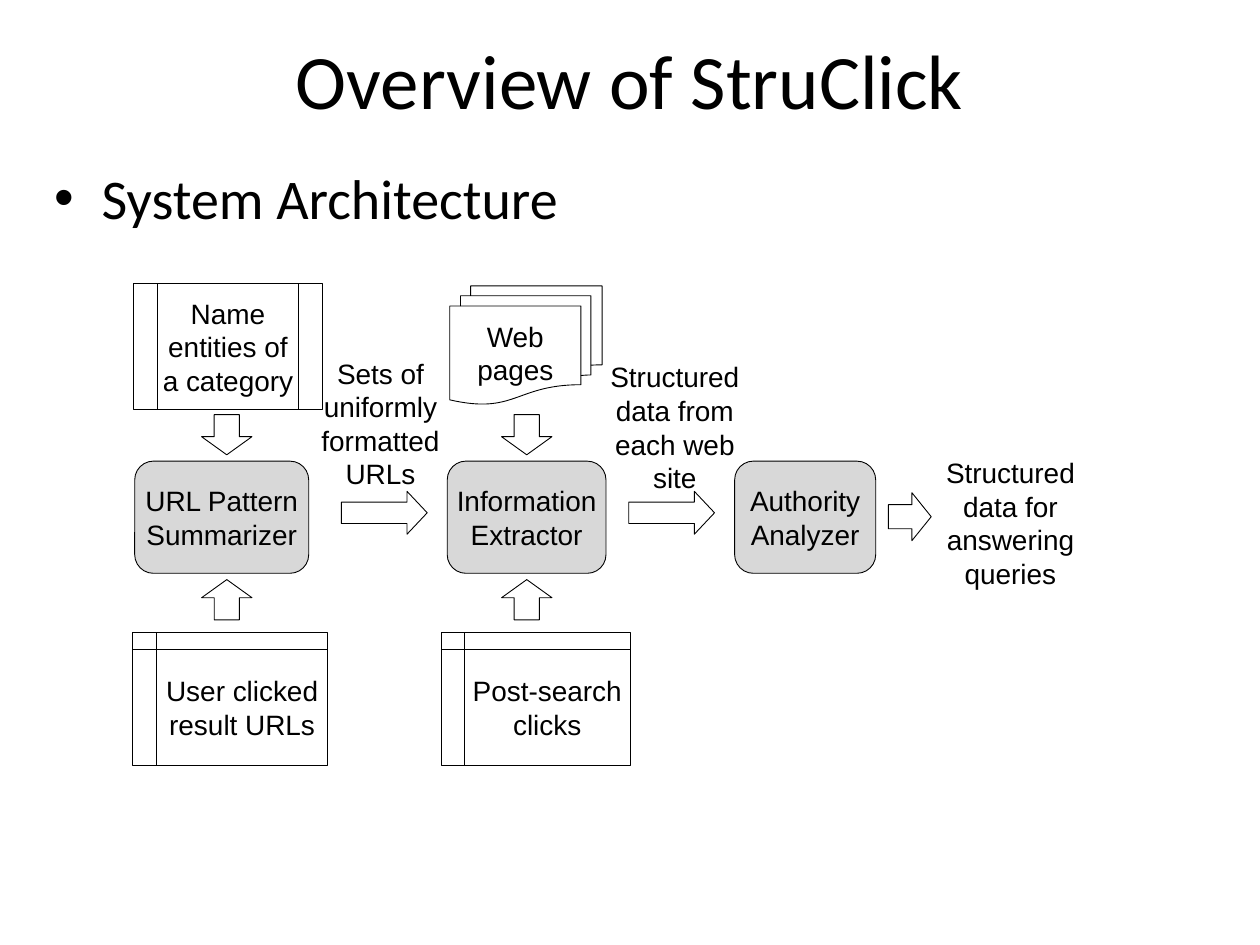
from lxml.etree import SubElement
from pptx import Presentation
from pptx.dml.color import RGBColor
from pptx.enum.shapes import MSO_SHAPE
from pptx.enum.text import MSO_ANCHOR, PP_ALIGN
from pptx.oxml.ns import qn
from pptx.util import Pt

BLACK = RGBColor(0, 0, 0)
WHITE = RGBColor(255, 255, 255)
GREY = RGBColor(0xD8, 0xD8, 0xD8)

INPUTS = [
    (MSO_SHAPE.FLOWCHART_PREDEFINED_PROCESS, "Name entities of a category", (4.3, 0, 108, 72)),
    (MSO_SHAPE.FLOWCHART_INTERNAL_STORAGE, "User clicked result URLs", (3.6, 199.4, 111.6, 76.3)),
    (MSO_SHAPE.FLOWCHART_INTERNAL_STORAGE, "Post-search clicks", (180, 199.4, 108, 76.3)),
    (MSO_SHAPE.FLOWCHART_MULTIDOCUMENT, "Web pages", (185, 1.4, 87.1, 67.7)),
]
STEPS = [
    ("URL Pattern Summarizer", 5, 99.4),
    ("Information Extractor", 183.6, 90.7),
    ("Authority Analyzer", 347.8, 80.6),
]
LABELS = [
    ("Structured data for answering queries", (465.1, 98.6, 80.6, 76.3)),
    ("Sets of uniformly formatted URLs", (110.9, 41.8, 69.1, 76.3)),
    ("Structured data from each web site", (275.8, 43.9, 75.6, 76.3)),
]


def write(frame, text, size, font, align):
    """Put one run of text in a frame and return its paragraph."""
    frame.word_wrap = True
    para = frame.paragraphs[0]
    para.alignment = align
    run = para.add_run()
    run.text = text
    run.font.size = Pt(size)
    run.font.name = font
    run.font.color.rgb = BLACK
    return para


def note(shape, text):
    """Centre a diagram caption in a shape without margins."""
    frame = shape.text_frame
    frame.margin_left = frame.margin_right = Pt(0)
    frame.margin_top = frame.margin_bottom = Pt(0)
    frame.vertical_anchor = MSO_ANCHOR.MIDDLE
    write(frame, text, 16, "Arial", PP_ALIGN.CENTER).space_after = Pt(10)


def place(slide, kind, box, fill=WHITE):
    """Add an outlined shape in a box."""
    shape = slide.shapes.add_shape(kind, *map(Pt, box))
    shape.shadow.inherit = False
    shape.fill.solid()
    shape.fill.fore_color.rgb = fill
    shape.line.color.rgb = BLACK
    shape.line.width = Pt(0.5)
    return shape


def arrow(slide, kind, box, turn=0):
    """Add a block arrow, turned by some degrees."""
    shape = place(slide, kind, box)
    shape.adjustments[0] = 0.5
    shape.adjustments[1] = 0.47 if kind == MSO_SHAPE.RIGHT_ARROW else 0.45
    shape.rotation = turn


def title(slide, box, text):
    """Add the slide title."""
    frame = slide.shapes.add_textbox(*map(Pt, box)).text_frame
    frame.vertical_anchor = MSO_ANCHOR.MIDDLE
    write(frame, text, 44, "Calibri", PP_ALIGN.CENTER)


def bullet(slide, box, text):
    """Add a body line with a hanging bullet."""
    frame = slide.shapes.add_textbox(*map(Pt, box)).text_frame
    para = write(frame, text, 32, "Calibri", PP_ALIGN.LEFT)
    para.space_before = Pt(6.4)
    props = para._p.get_or_add_pPr()
    props.set("marL", str(Pt(27)))
    props.set("indent", str(Pt(-27)))
    SubElement(props, qn("a:buFont")).set("typeface", "Arial")
    SubElement(props, qn("a:buChar")).set("char", "•")


def flow(slide, left, top):
    """Draw the architecture diagram from its top left corner."""

    def at(x, y, wide, high):
        """Shift a box to the diagram's corner."""
        return left + x, top + y, wide, high

    for kind, text, box in INPUTS:
        note(place(slide, kind, at(*box)), text)
    for text, x, wide in STEPS:
        box = at(x, 101.5, wide, 64.1)
        note(place(slide, MSO_SHAPE.FLOWCHART_ALTERNATE_PROCESS, box, GREY), text)
    for text, box in LABELS:
        note(slide.shapes.add_textbox(*map(Pt, at(*box))), text)
    for x in (123.1, 287.3):
        arrow(slide, MSO_SHAPE.RIGHT_ARROW, at(x, 118.8, 49, 24.5))
    for y, turn in ((74.9, 0), (169.2, 180)):
        for x in (43.2, 214.6):
            arrow(slide, MSO_SHAPE.DOWN_ARROW, at(x, y, 28.8, 23), turn)
    arrow(slide, MSO_SHAPE.DOWN_ARROW, at(434.2, 121, 27.4, 24.5), 270)


def main():
    """Build and save the slide."""
    deck = Presentation()
    deck.slide_width, deck.slide_height = Pt(720), Pt(540)
    slide = deck.slides.add_slide(deck.slide_layouts[6])
    title(slide, (0, 6, 720, 78), "Overview of StruClick")
    bullet(slide, (24, 90, 690, 54), "System Architecture")
    flow(slide, 72, 162)
    deck.save("out.pptx")


if __name__ == "__main__":
    main()
